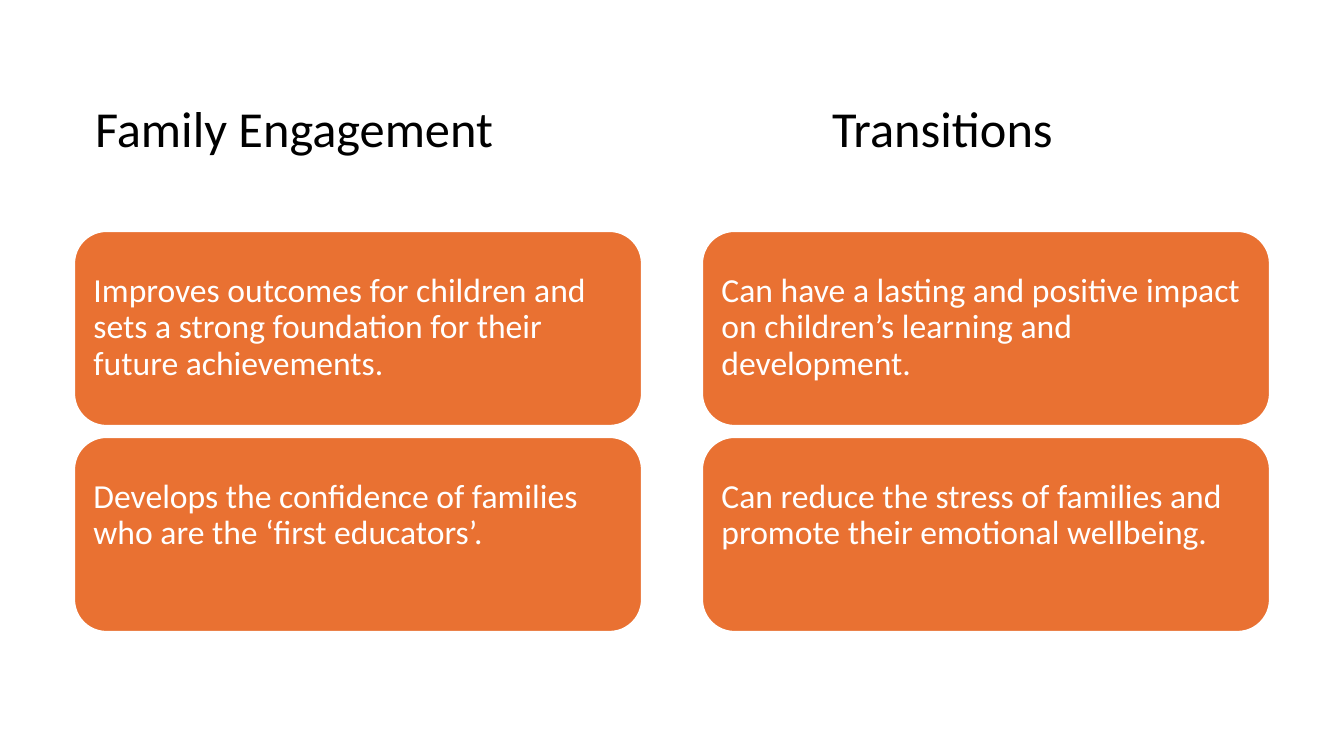
from pptx import Presentation
from pptx.dml.color import RGBColor
from pptx.enum.shapes import MSO_SHAPE
from pptx.enum.text import MSO_ANCHOR, MSO_AUTO_SIZE, PP_ALIGN
from pptx.util import Pt

ROUNDED = MSO_SHAPE.ROUNDED_RECTANGLE
TOP, BOTTOM = MSO_ANCHOR.TOP, MSO_ANCHOR.BOTTOM
NO_AUTOFIT = MSO_AUTO_SIZE.NONE
LEFT = PP_ALIGN.LEFT

EMU_PER_PX = 12192000 / 1344
COMPARISON_LAYOUT = 4
FONT = "Calibri"
COLORS = {"heading": "000000", "card": "E97132", "card_text": "FFFFFF", "outline": "FFFFFF"}

CARD_TOP, CARD_WIDTH, CARD_HEIGHT, CARD_PITCH = 231, 568, 195, 206
CARD_PAD_X, CARD_PAD_TOP = 10, 33
HEADING_TOP, HEADING_HEIGHT = 73, 91

COLUMNS = [
    {
        "placeholder": 1,
        "heading": "Family Engagement",
        "heading_left": 85,
        "heading_width": 595,
        "cards_left": 74,
        "cards": [
            "Improves outcomes for children and sets a strong foundation for their future achievements.",
            "Develops the confidence of families who are the ‘first educators’.",
        ],
    },
    {
        "placeholder": 3,
        "heading": "Transitions",
        "heading_left": 822,
        "heading_width": 572,
        "cards_left": 702,
        "cards": [
            "Can have a lasting and positive impact on children’s learning and development.",
            "Can reduce the stress of families and promote their emotional wellbeing.",
        ],
    },
]


def px(length):
    return round(length * EMU_PER_PX)


def color(name):
    return RGBColor.from_string(COLORS[name])


def write_text(frame, text, size, color_name, anchor):
    frame.text = text
    frame.word_wrap = True
    frame.auto_size = NO_AUTOFIT
    frame.vertical_anchor = anchor
    paragraph = frame.paragraphs[0]
    paragraph.alignment = LEFT
    paragraph.line_spacing = 0.9
    paragraph.space_before = Pt(0)
    font = paragraph.runs[0].font
    font.name = FONT
    font.size = Pt(size)
    font.bold = False
    font.color.rgb = color(color_name)


def place_heading(heading, text, left, width):
    heading.left, heading.top = px(left), px(HEADING_TOP)
    heading.width, heading.height = px(width), px(HEADING_HEIGHT)
    write_text(heading.text_frame, text, 36, "heading", BOTTOM)


def add_card(slide, text, left, top):
    card = slide.shapes.add_shape(ROUNDED, px(left), px(top), px(CARD_WIDTH), px(CARD_HEIGHT))
    card.shadow.inherit = False
    card.fill.solid()
    card.fill.fore_color.rgb = color("card")
    card.line.color.rgb = color("outline")
    card.line.width = Pt(1.5)
    frame = card.text_frame
    frame.margin_left = frame.margin_right = px(CARD_PAD_X)
    frame.margin_top = px(CARD_PAD_TOP)
    frame.margin_bottom = 0
    write_text(frame, text, 24, "card_text", TOP)


def remove_empty_placeholders(slide):
    for placeholder in list(slide.placeholders):
        if not placeholder.text_frame.text:
            placeholder.element.getparent().remove(placeholder.element)


def main():
    presentation = Presentation()
    presentation.slide_width, presentation.slide_height = px(1344), px(756)
    slide = presentation.slides.add_slide(presentation.slide_layouts[COMPARISON_LAYOUT])
    headings = {p.placeholder_format.idx: p for p in slide.placeholders}
    for column in COLUMNS:
        place_heading(headings[column["placeholder"]], column["heading"],
                      column["heading_left"], column["heading_width"])
        for row, text in enumerate(column["cards"]):
            add_card(slide, text, column["cards_left"], CARD_TOP + row * CARD_PITCH)
    remove_empty_placeholders(slide)
    presentation.save("out.pptx")


if __name__ == "__main__":
    main()
